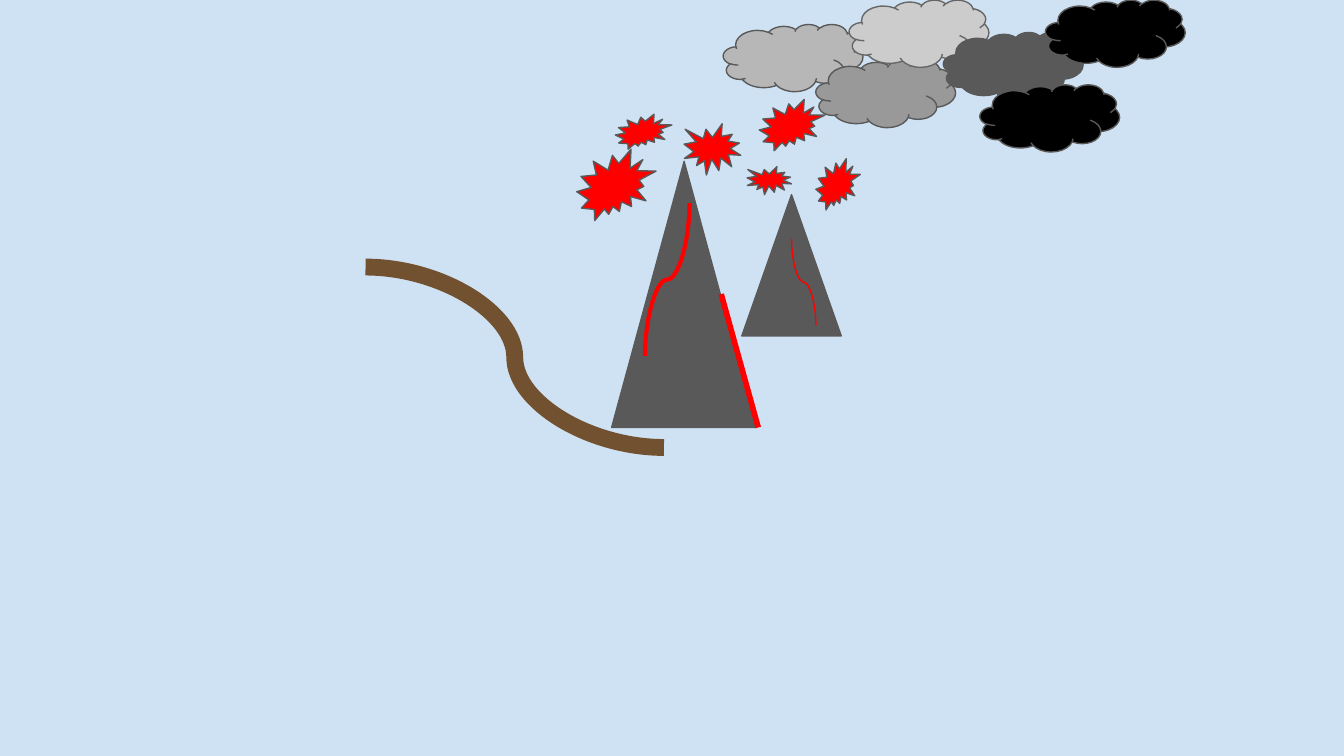
from dataclasses import dataclass

from lxml.etree import SubElement
from pptx import Presentation
from pptx.dml.color import RGBColor
from pptx.enum.shapes import MSO_CONNECTOR as Link, MSO_SHAPE as Preset
from pptx.oxml.ns import qn
from pptx.util import Cm, Pt


@dataclass(frozen=True)
class Theme:
    sky: str = "CFE2F3"
    rock: str = "595959"
    lava: str = "FF0000"
    trail: str = "725130"
    outline: str = "595959"
    soft_outline: str = "666666"
    thin: float = 0.75


THEME = Theme()


@dataclass(frozen=True)
class Figure:
    """A filled preset shape, measured in centimetres."""
    preset: Preset
    left: float
    top: float
    width: float
    height: float
    fill: str
    outline: str = THEME.outline


@dataclass(frozen=True)
class Stream:
    """A line between two points in centimetres; upright curves leave vertically."""
    begin: tuple[float, float]
    end: tuple[float, float]
    color: str
    weight: float
    kind: Link = Link.CURVE
    upright: bool = False


def draw_figure(slide, figure: Figure) -> None:
    shape = slide.shapes.add_shape(
        figure.preset, Cm(figure.left), Cm(figure.top), Cm(figure.width), Cm(figure.height))
    shape.shadow.inherit = False
    shape.fill.solid()
    shape.fill.fore_color.rgb = RGBColor.from_string(figure.fill)
    shape.line.color.rgb = RGBColor.from_string(figure.outline)
    shape.line.width = Pt(THEME.thin)


def draw_stream(slide, stream: Stream) -> None:
    (x1, y1), (x2, y2) = stream.begin, stream.end
    leans_right = x2 > x1
    if stream.upright:
        # Lay the curve on its side around its centre, then turn it
        mid_x, mid_y = (x1 + x2) / 2, (y1 + y2) / 2
        half_length, half_width = abs(y2 - y1) / 2, abs(x2 - x1) / 2
        x1, x2 = mid_x - half_length, mid_x + half_length
        y1, y2 = mid_y - half_width, mid_y + half_width
    connector = slide.shapes.add_connector(stream.kind, Cm(x1), Cm(y1), Cm(x2), Cm(y2))
    properties = connector._element.spPr
    if stream.upright:
        properties.xfrm.rot = 270 if leans_right else 90
        properties.xfrm.flipH = leans_right
    connector.line.color.rgb = RGBColor.from_string(stream.color)
    connector.line.width = Pt(stream.weight)
    SubElement(properties, qn("a:effectLst"))


TRAIL = Stream((12.55, 8.46), (6.91, 5.05), THEME.trail, 9)

VOLCANOES = [
    Figure(Preset.ISOSCELES_TRIANGLE, 11.56, 3.05, 2.74, 5.03, THEME.rock),
    Figure(Preset.ISOSCELES_TRIANGLE, 14.02, 3.68, 1.88, 2.67, THEME.rock),
]

BLASTS = [
    Figure(preset, *box, THEME.lava)
    for preset, box in [
        (Preset.EXPLOSION2, (11.63, 2.16, 1.07, 0.66)),
        (Preset.EXPLOSION2, (14.35, 1.88, 1.24, 0.97)),
        (Preset.EXPLOSION2, (10.9, 2.82, 1.5, 1.35)),
        (Preset.EXPLOSION1, (12.93, 2.34, 1.07, 0.97)),
        (Preset.EXPLOSION2, (15.42, 3, 0.84, 0.97)),
        (Preset.EXPLOSION1, (14.12, 3.15, 0.84, 0.53)),
    ]
]

LAVA_STREAMS = [
    Stream((13.03, 3.84), (12.19, 6.73), THEME.lava, 2.25, upright=True),
    Stream((13.63, 5.56), (14.33, 8.08), THEME.lava, 3, Link.STRAIGHT),
    Stream((14.96, 4.52), (15.42, 6.15), THEME.lava, THEME.thin, upright=True),
]

SMOKE = [
    Figure(Preset.CLOUD, left, top, 2.64, 1.27, fill, outline)
    for left, top, fill, outline in [
        (13.67, 0.46, "B7B7B7", THEME.outline),
        (15.42, 1.14, "999999", THEME.outline),
        (16.05, 0, "CCCCCC", THEME.soft_outline),
        (17.83, 0.61, "595959", THEME.outline),
        (18.52, 1.6, "000000", THEME.outline),
        (19.76, 0, "000000", THEME.outline),
    ]
]


def main() -> None:
    deck = Presentation()
    deck.slide_width, deck.slide_height = Cm(25.4), Cm(14.29)
    slide = deck.slides.add_slide(deck.slide_layouts[6])

    # Sky
    sky = slide.background.fill
    sky.solid()
    sky.fore_color.rgb = RGBColor.from_string(THEME.sky)

    # Trail and volcanoes
    draw_stream(slide, TRAIL)
    for figure in VOLCANOES + BLASTS:
        draw_figure(slide, figure)

    # Lava running down, smoke drifting off
    for stream in LAVA_STREAMS:
        draw_stream(slide, stream)
    for cloud in SMOKE:
        draw_figure(slide, cloud)

    deck.save("out.pptx")


if __name__ == "__main__":
    main()
